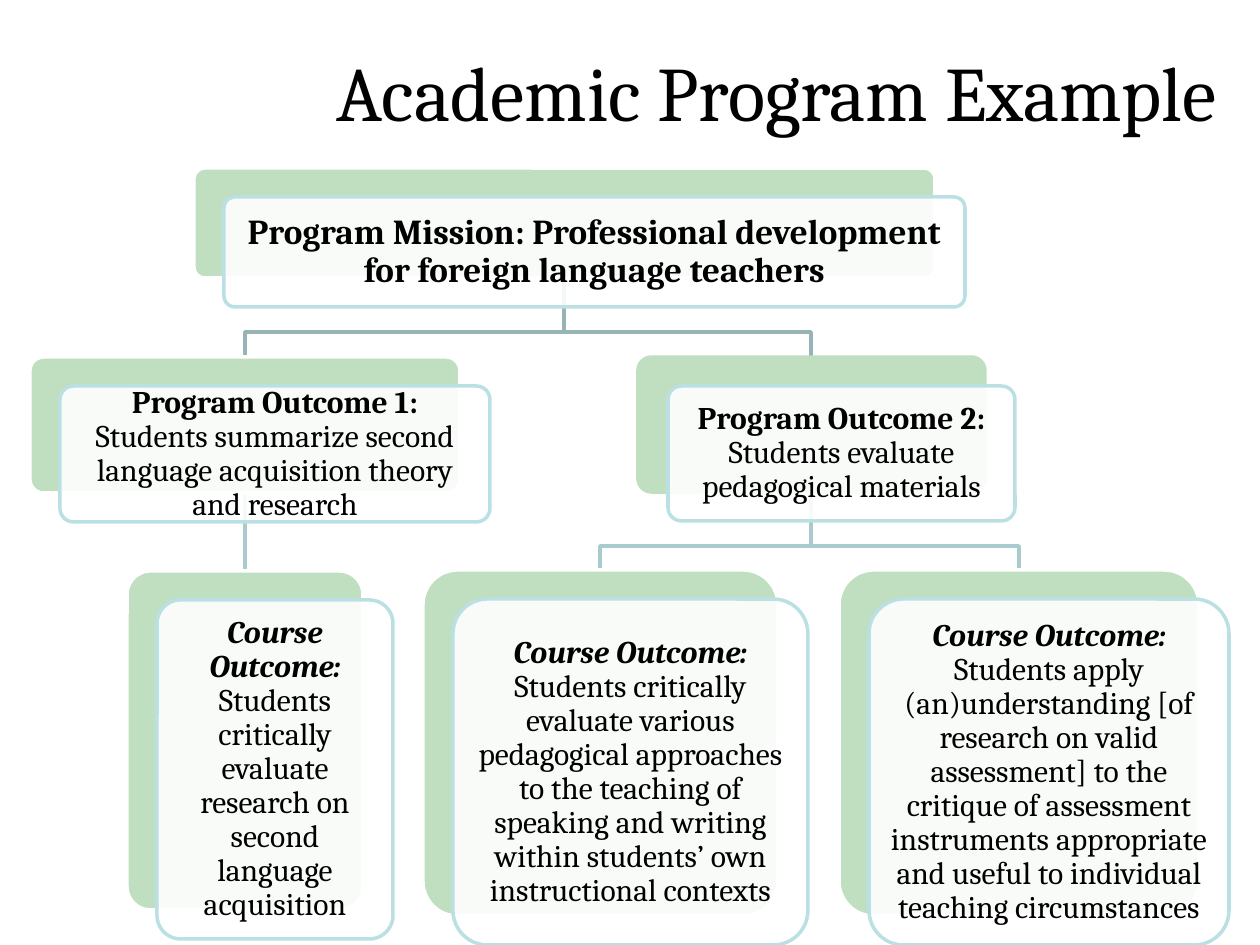
from collections import namedtuple

from pptx import Presentation
from pptx import util as u
from pptx.dml.color import RGBColor
from pptx.enum import shapes, text
from pptx.oxml.ns import qn
from lxml import etree

BLACK = RGBColor(0x00, 0x00, 0x00)
WHITE = RGBColor(0xFF, 0xFF, 0xFF)
GREEN = RGBColor(0xC0, 0xDE, 0xC0)
PALE_BLUE = RGBColor(0xBB, 0xE0, 0xE3)
UPPER_LINK = RGBColor(0x96, 0xB3, 0xB6)
LOWER_LINK = RGBColor(0xAA, 0xCB, 0xCE)

Card = namedtuple("Card", "left top width height edge size italic heading body")

MISSION = Card(194, 168, 741, 110, WHITE, 20, False,
               "Program Mission: Professional development for foreign language teachers", "")
OUTCOME_1 = Card(30, 357, 430, 136, WHITE, 18, False, "Program Outcome 1: ",
                 "Students summarize second language acquisition theory and research")
OUTCOME_2 = Card(638, 357, 347, 135, GREEN, 18, False, "Program Outcome 2: ",
                 "Students evaluate pedagogical materials")
RESEARCH = Card(127, 571, 236, 339, WHITE, 18, True, "Course Outcome: ",
                "Students critically evaluate research on second language acquisition")
TEACHING = Card(423, 570, 355, 346, WHITE, 18, True, "Course Outcome: ",
                "Students critically evaluate various pedagogical approaches to the teaching "
                "of speaking and writing within students’ own instructional contexts")
ASSESSMENT = Card(839, 570, 360, 346, WHITE, 18, True, "Course Outcome: ",
                  "Students apply (an)understanding [of research on valid assessment] to the "
                  "critique of assessment instruments appropriate and useful to individual "
                  "teaching circumstances")


def px(value):
    return round(value * u.Inches(1) / 126)


class OutcomeChart:
    """Draws a hierarchy of layered cards on one slide."""

    font_name = "Cambria"
    line_width = u.Pt(2)
    offset_x, offset_y = 30, 29
    bend = 54
    corner = 0.1

    def __init__(self, slide):
        self.slide = slide

    def add_run(self, paragraph, words, size, bold=False, italic=False):
        run = paragraph.add_run()
        run.text = words
        font = run.font
        font.name, font.size = self.font_name, u.Pt(size)
        font.bold, font.italic = bold, italic
        font.color.rgb = BLACK

    def add_title(self, words, left, top, width, height):
        title = self.slide.shapes.title
        title.left, title.top = px(left), px(top)
        title.width, title.height = px(width), px(height)
        title.text_frame.vertical_anchor = text.MSO_ANCHOR.TOP
        paragraph = title.text_frame.paragraphs[0]
        paragraph.alignment = text.PP_ALIGN.CENTER
        self.add_run(paragraph, words, 44)

    def add_elbow(self, parent, child, color):
        start_x = parent.left + parent.width // 2
        start_y = parent.top + parent.height
        end_x = child.left + child.width // 2
        bend_y = start_y + self.bend
        builder = self.slide.shapes.build_freeform(px(start_x), px(start_y))
        points = [(start_x, bend_y), (end_x, bend_y), (end_x, child.top)]
        builder.add_line_segments([(px(x), px(y)) for x, y in points], close=False)
        shape = builder.convert_to_shape()
        shape.shadow.inherit = False
        shape.fill.background()
        shape.line.color.rgb = color
        shape.line.width = self.line_width

    def add_straight(self, color):
        connector = self.slide.shapes.add_connector(shapes.MSO_CONNECTOR.STRAIGHT, 0, 0, 0, 0)
        connector.line.color.rgb = color
        connector.line.width = self.line_width
        etree.SubElement(connector._element.spPr, qn("a:effectLst"))
        return connector

    def add_panel(self, left, top, width, height, fill, edge):
        shape = self.slide.shapes.add_shape(
            shapes.MSO_SHAPE.ROUNDED_RECTANGLE, px(left), px(top), px(width), px(height))
        shape.adjustments[0] = self.corner
        shape.shadow.inherit = False
        shape.fill.solid()
        shape.fill.fore_color.rgb = fill
        shape.line.color.rgb = edge
        shape.line.width = self.line_width
        return shape

    def add_card(self, card):
        back = self.add_panel(card.left, card.top, card.width, card.height, GREEN, card.edge)
        front = self.add_panel(card.left + self.offset_x, card.top + self.offset_y,
                               card.width, card.height, WHITE, PALE_BLUE)
        color = front._element.spPr.find(qn("a:solidFill"))[0]
        etree.SubElement(color, qn("a:alpha"), val="90000")

        frame = front.text_frame
        frame.word_wrap = True
        frame.vertical_anchor = text.MSO_ANCHOR.MIDDLE
        inset = u.Inches(0.08 if card.size == 20 else 0.07)
        frame.margin_left = frame.margin_right = inset
        frame.margin_top = frame.margin_bottom = inset
        paragraph = frame.paragraphs[0]
        paragraph.alignment = text.PP_ALIGN.CENTER
        paragraph.line_spacing = 0.9
        self.add_run(paragraph, card.heading, card.size, bold=True, italic=card.italic)
        if card.body:
            self.add_run(paragraph, card.body, card.size)
        return back


def main():
    presentation = Presentation()
    presentation.slide_width, presentation.slide_height = u.Inches(10), u.Inches(7.5)
    chart = OutcomeChart(presentation.slides.add_slide(presentation.slide_layouts[5]))
    chart.add_title("Academic Program Example", 315, 38, 924, 157)

    for child in (ASSESSMENT, TEACHING):
        chart.add_elbow(OUTCOME_2, child, LOWER_LINK)
    for child in (OUTCOME_2, OUTCOME_1):
        chart.add_elbow(MISSION, child, UPPER_LINK)
    research_link = chart.add_straight(LOWER_LINK)

    chart.add_card(MISSION)
    research_link.begin_connect(chart.add_card(OUTCOME_1), 2)
    research_link.end_connect(chart.add_card(RESEARCH), 0)
    for card in (OUTCOME_2, TEACHING, ASSESSMENT):
        chart.add_card(card)

    presentation.save("out.pptx")


if __name__ == "__main__":
    main()
